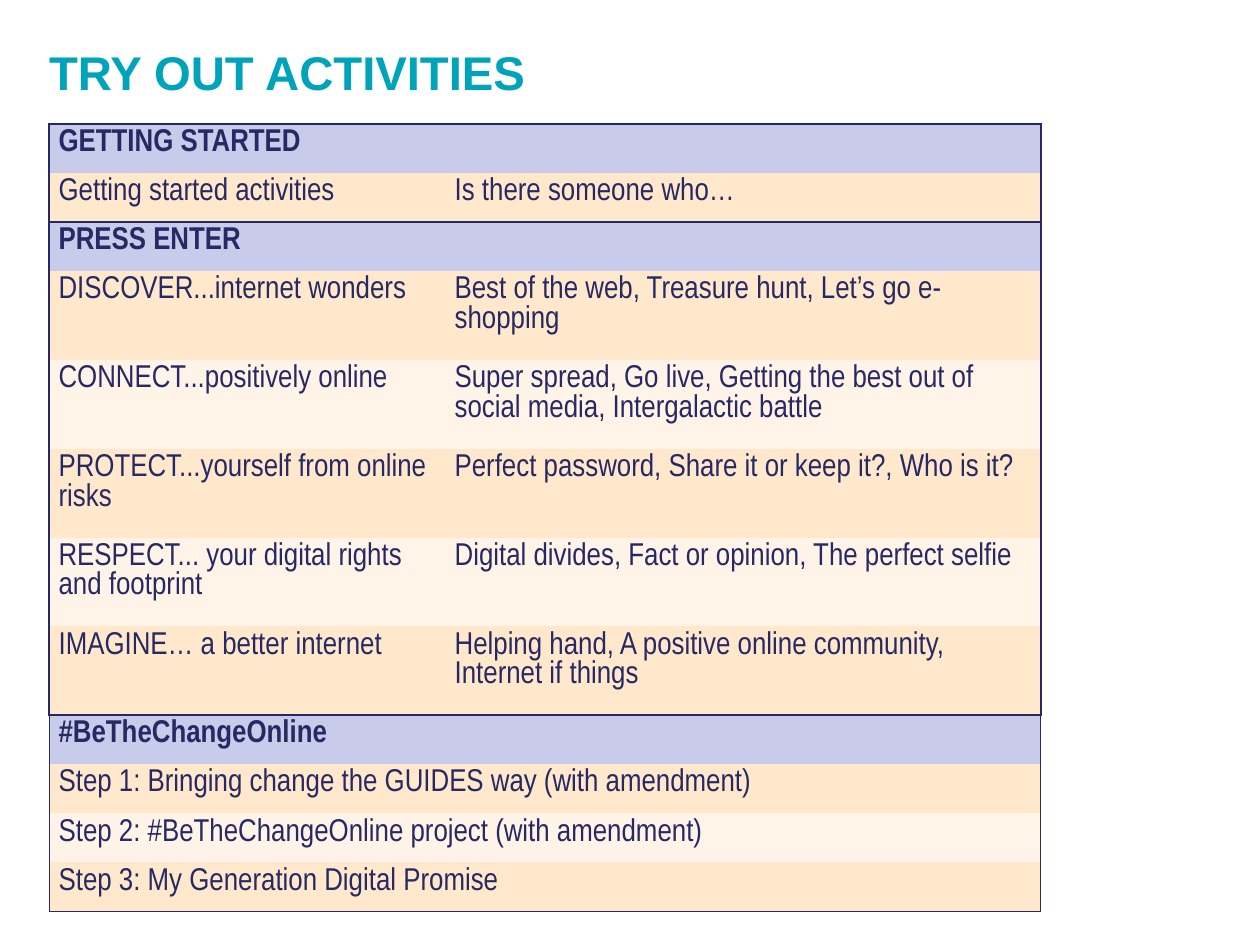
from lxml import etree
from pptx import Presentation, util as u
from pptx.dml.color import RGBColor
from pptx.enum import text
from pptx.oxml.ns import qn

PX = 9144
COLORS = {"title": "00A4BA", "ink": "262963", "heading": "C9CBEA",
          "odd": "FFE8CC", "even": "FFF4E7"}
SECTIONS = [
    ("GETTING STARTED", 1.5, [("Getting started activities", "Is there someone who…")]),
    ("PRESS ENTER", 1.5, [
        ("DISCOVER...internet wonders", "Best of the web, Treasure hunt, Let’s go e-shopping"),
        ("CONNECT...positively online",
         "Super spread, Go live, Getting the best out of social media, Intergalactic battle"),
        ("PROTECT...yourself from online risks",
         "Perfect password, Share it or keep it?, Who is it?"),
        ("RESPECT... your digital rights and footprint",
         "Digital divides, Fact or opinion, The perfect selfie"),
        ("IMAGINE… a better internet",
         "Helping hand, A positive online community, Internet if things"),
    ]),
    ("#BeTheChangeOnline", 1, [
        ("Step 1: Bringing change the GUIDES way (with amendment)",),
        ("Step 2: #BeTheChangeOnline project (with amendment)",),
        ("Step 3: My Generation Digital Promise",),
    ]),
]


def style(font, color, **values):
    for key, value in values.items():
        setattr(font, key, value)
    font.color.rgb = RGBColor.from_string(COLORS[color])


def add_borders(cell, widths):
    props = cell._tc.get_or_add_tcPr()
    for side in "LRTB":
        line = etree.SubElement(props, qn(f"a:ln{side}"))
        if widths.get(side):
            line.set("w", str(u.Pt(widths[side])))
            paint = etree.SubElement(line, qn("a:solidFill"))
            etree.SubElement(paint, qn("a:srgbClr"), val=COLORS["ink"])
        else:
            etree.SubElement(line, qn("a:noFill"))


prs = Presentation()
prs.slide_width, prs.slide_height = 1333 * PX, 1000 * PX
slide = prs.slides.add_slide(prs.slide_layouts[5])

title = slide.shapes.title
title_box = {"left": 52, "top": 54, "width": 1136, "height": 52}
for key, value in title_box.items():
    setattr(title, key, value * PX)
frame = title.text_frame
frame_format = {"margin_left": 0, "margin_right": 0, "margin_top": 0, "margin_bottom": 0,
                "word_wrap": True, "auto_size": text.MSO_AUTO_SIZE.NONE,
                "vertical_anchor": text.MSO_ANCHOR.MIDDLE}
for key, value in frame_format.items():
    setattr(frame, key, value)
frame.text = "TRY OUT ACTIVITIES"
heading = frame.paragraphs[0]
heading.alignment = text.PP_ALIGN.LEFT
heading.line_spacing = 0.9
style(heading.runs[0].font, "title", name="Arial", size=u.Pt(36), bold=True)

row_count = sum(1 + len(activities) for _, _, activities in SECTIONS)
activities_table = slide.shapes.add_table(
    row_count, 2, 52 * PX, 131 * PX, 1049 * PX, 834 * PX).table
for column, width in zip(activities_table.columns, (419, 630)):
    column.width = width * PX

row = 0
for section, edge, activities in SECTIONS:
    lines = [(section,)] + activities
    for index, entries in enumerate(lines):
        is_heading = index == 0
        merged = len(entries) == 1
        tall = section == "PRESS ENTER" and not is_heading
        activities_table.rows[row].height = (94 if tall else 52) * PX
        fill = "heading" if is_heading else "odd" if index % 2 else "even"
        cells = [activities_table.cell(row, column) for column in range(2)]
        if merged:
            cells[0].merge(cells[1])
        for column, cell in enumerate(cells):
            add_borders(cell, {
                "L": edge if column == 0 else 0,
                "R": edge if column == 1 or merged else 0,
                "T": 1.5 if is_heading else 0,
                "B": edge if index == len(lines) - 1 else 0,
            })
            cell.fill.solid()
            cell.fill.fore_color.rgb = RGBColor.from_string(COLORS[fill])
        for cell, entry in zip(cells, entries):
            cell.text = entry
            style(cell.text_frame.paragraphs[0].runs[0].font, "ink",
                  name="Arial Narrow", size=u.Pt(24), bold=is_heading)
        row += 1

prs.save("out.pptx")
